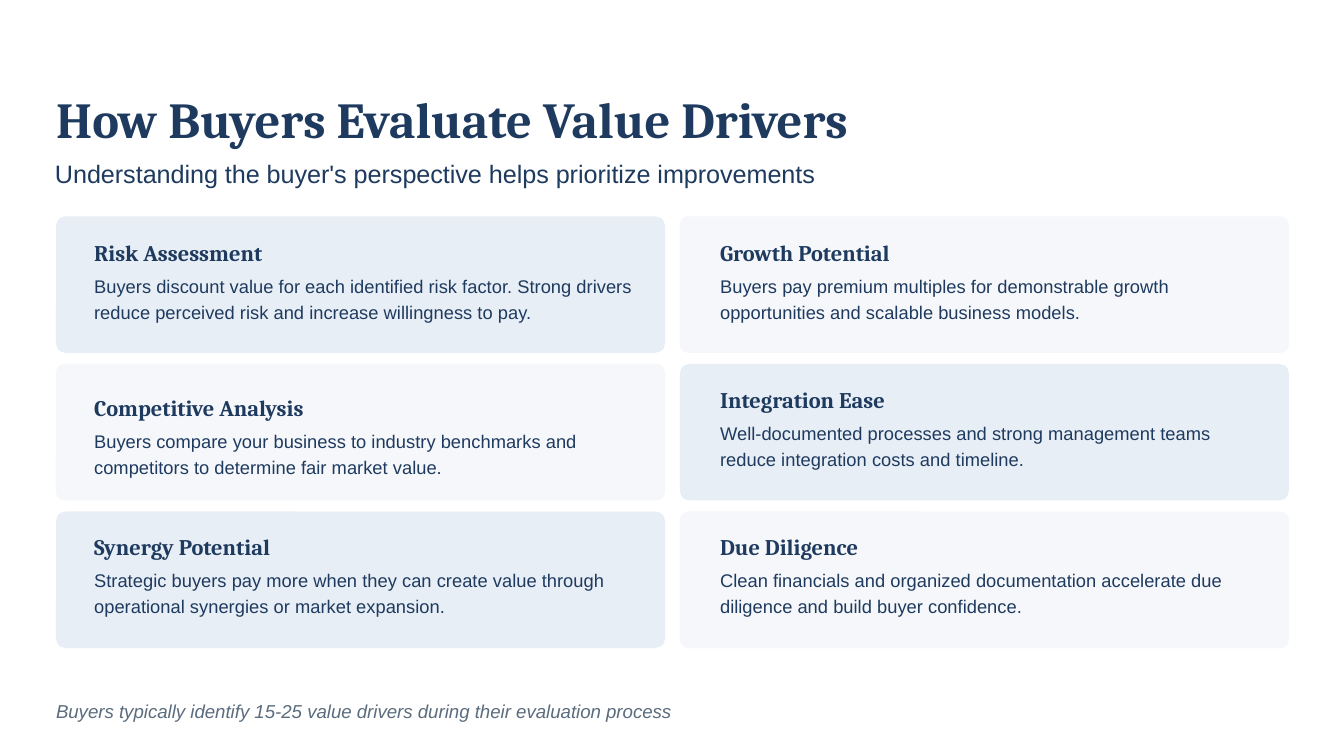
import pptx
import pptx.util
import pptx.dml.color
import pptx.enum.shapes
import pptx.enum.text

Cm, Pt = pptx.util.Cm, pptx.util.Pt
NAVY, GREY = "1E3A5F", "5A6C7D"
BLUE, PALE = "E8EEF5", "F5F7FA"

# Heading, body, extra drop of the text in its card (cm)
CARDS = [
    ("Risk Assessment", "Buyers discount value for each identified risk factor. "
     "Strong drivers reduce perceived risk and increase willingness to pay.", 0),
    ("Growth Potential", "Buyers pay premium multiples for demonstrable growth "
     "opportunities and scalable business models.", 0),
    ("Competitive Analysis", "Buyers compare your business to industry benchmarks "
     "and competitors to determine fair market value.", 0.15),
    ("Integration Ease", "Well-documented processes and strong management teams "
     "reduce integration costs and timeline.", 0),
    ("Synergy Potential", "Strategic buyers pay more when they can create value "
     "through operational synergies or market expansion.", 0),
    ("Due Diligence", "Clean financials and organized documentation accelerate "
     "due diligence and build buyer confidence.", 0),
]


def color(code):
    return pptx.dml.color.RGBColor.from_string(code)


def write(shape, text, size, line, font="Arial", ink=NAVY, bold=False,
          slant=False, after=0):
    """Fill a text shape with one styled paragraph and no margins."""
    frame = shape.text_frame
    frame.word_wrap = True
    frame.auto_size = pptx.enum.text.MSO_AUTO_SIZE.NONE
    frame.vertical_anchor = pptx.enum.text.MSO_ANCHOR.TOP
    frame.margin_left = frame.margin_right = 0
    frame.margin_top = frame.margin_bottom = 0
    para = frame.paragraphs[0]
    para.text = text
    para.alignment = pptx.enum.text.PP_ALIGN.LEFT
    para.line_spacing = Pt(line)
    para.space_before, para.space_after = Pt(0), Pt(after)
    para.font.name, para.font.size = font, Pt(size)
    para.font.bold, para.font.italic = bold, slant
    para.font.color.rgb = color(ink)


def label(slide, left, top, width, height, text, size, line, **style):
    box = slide.shapes.add_textbox(Cm(left), Cm(top), Cm(width), Cm(height))
    write(box, text, size, line, **style)


def title(slide, text):
    shape = slide.shapes.title
    shape.left, shape.top = Cm(1.06), Cm(1.75)
    shape.width, shape.height = Cm(17.63), Cm(1.07)
    write(shape, text, 27, 30, font="Cambria", bold=True, after=6)


def panel(slide, left, top, fill, round_by):
    shape = slide.shapes.add_shape(
        pptx.enum.shapes.MSO_SHAPE.ROUNDED_RECTANGLE,
        Cm(left), Cm(top), Cm(11.51), Cm(2.58))
    shape.adjustments[0] = round_by
    shape.shadow.inherit = False
    shape.fill.solid()
    shape.fill.fore_color.rgb = color(fill)
    shape.line.fill.background()


def card(slide, row, col, head, body, drop):
    # Fills alternate like a checkerboard
    fill, round_by = (PALE, 0.06) if (row + col) % 2 else (BLUE, 0.07)
    panel(slide, 1.06 + 11.79 * col, 4.09 + 2.79 * row, fill, round_by)
    left = 1.78 + 11.83 * col
    top = 4.52 + 2.78 * row + drop
    label(slide, left, top, 10.19, 0.51, head, 12, 14.4,
          font="Cambria", bold=True, after=3)
    label(slide, left, top + 0.62, 10.19, 0.97, body, 9.8, 13.7)


def main():
    deck = pptx.Presentation()
    deck.slide_width, deck.slide_height = Cm(25.4), Cm(14.29)
    slide = deck.slides.add_slide(deck.slide_layouts[5])

    # Title and subtitle
    title(slide, "How Buyers Evaluate Value Drivers")
    label(slide, 1.04, 2.82, 23.75, 0.74,
          "Understanding the buyer's perspective helps prioritize improvements",
          13.5, 21, after=9)

    # Cards in two columns
    for i, (head, body, drop) in enumerate(CARDS):
        card(slide, i // 2, i % 2, head, body, drop)

    # Closing note
    label(slide, 1.06, 13.16, 23.75, 0.48,
          "Buyers typically identify 15-25 value drivers during their "
          "evaluation process", 10, 14, ink=GREY, slant=True)

    deck.save("out.pptx")


if __name__ == "__main__":
    main()
